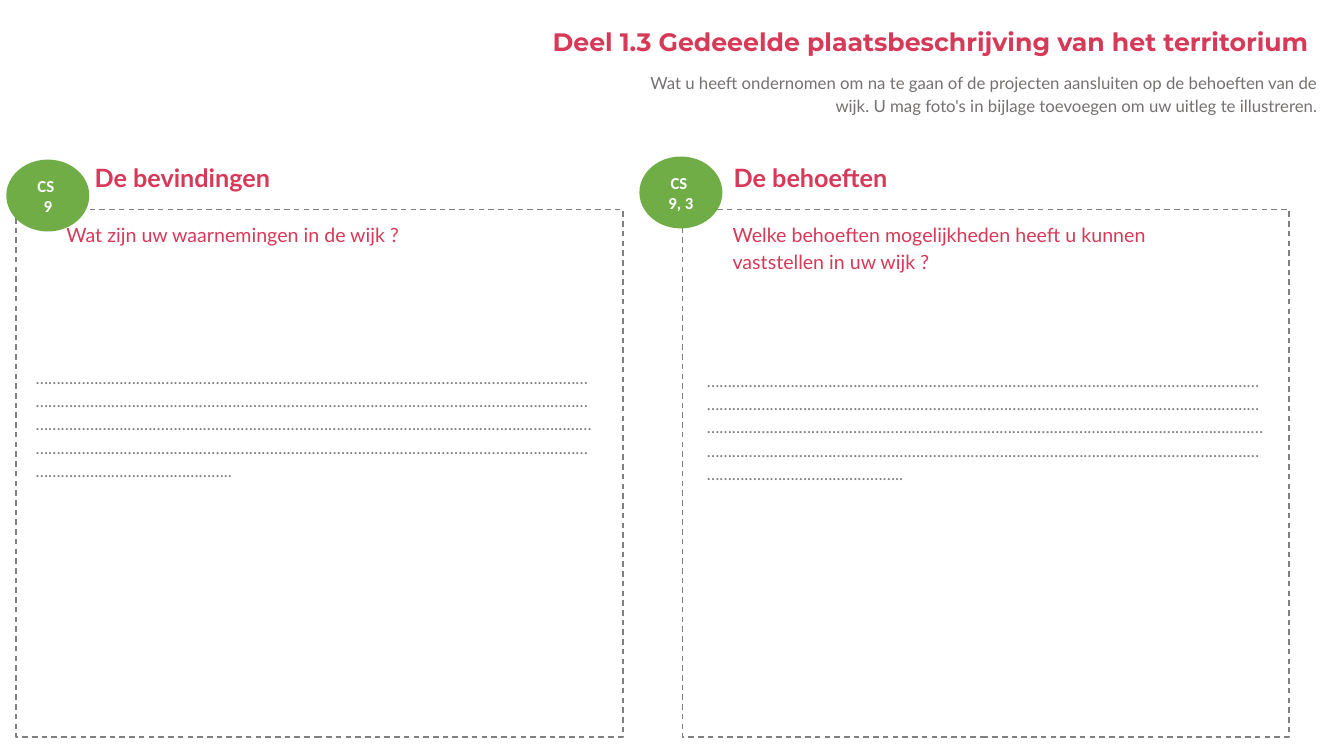
from pptx import Presentation
from pptx.dml.color import RGBColor
from pptx.enum.dml import MSO_LINE
from pptx.enum.shapes import MSO_SHAPE as Shape
from pptx.enum.text import MSO_ANCHOR as Anchor, MSO_AUTO_SIZE as AutoSize, PP_ALIGN as Align
from pptx.util import Pt

RED = RGBColor(0xD7, 0x39, 0x58)
GREEN = RGBColor(0x70, 0xAD, 0x47)
GREY = RGBColor(0x80, 0x80, 0x80)
DARK_GREY = RGBColor(0x76, 0x71, 0x71)
WHITE = RGBColor(0xFF, 0xFF, 0xFF)

TITLE = {"name": "Montserrat", "size": Pt(18), "bold": True}
INTRO = {"name": "Lato", "size": Pt(12)}
HEADING = {"name": "Lato", "size": Pt(18), "bold": True}
QUESTION = {"name": "Lato", "size": Pt(14)}
ANSWER = {"name": "Lato", "size": Pt(12), "italic": True}
BADGE = {"name": "Calibri", "size": Pt(12), "bold": True}
BODY = {"line_spacing": 1.15, "space_after": Pt(10)}

DOTS = "…………………………………………………………………………………………………………………………………………………………………………………………………………………………………………………………….……………………………………………………………………………………………………………………………………………………………………………………………………………………………………………………………….."

PANELS = [
    {"heading": "De bevindingen", "question": "Wat zijn uw waarnemingen in de wijk ?",
     "criteria": "9", "frame_x": 11.5, "heading_x": 60.5, "question_x": 40.3,
     "question_h": 25.2, "answer_at": (18.7, 257), "badge_at": (5, 114.5)},
    {"heading": "De behoeften",
     "question": "Welke behoeften mogelijkheden heeft u kunnen vaststellen in uw wijk ?",
     "criteria": "9, 3", "frame_x": 487.4, "heading_x": 517, "question_x": 516.2,
     "question_h": 44.6, "answer_at": (498.2, 259.2), "badge_at": (457.2, 112.3)},
]


def write(shape, lines, font, color, paragraph_format):
    shape.text_frame.text = "\n".join(lines)
    for paragraph in shape.text_frame.paragraphs:
        for key, value in paragraph_format.items():
            setattr(paragraph, key, value)
        text_font = paragraph.runs[0].font
        for key, value in font.items():
            setattr(text_font, key, value)
        text_font.color.rgb = color


def add_text(box, text, font, color, paragraph_format):
    textbox = slide.shapes.add_textbox(*map(Pt, box))
    textbox.text_frame.word_wrap = True
    textbox.text_frame.auto_size = AutoSize.SHAPE_TO_FIT_TEXT
    write(textbox, [text], font, color, paragraph_format)


prs = Presentation()
prs.slide_width, prs.slide_height = Pt(960), Pt(540)
slide = prs.slides.add_slide(prs.slide_layouts[5])

title = slide.shapes.title
title.left, title.top, title.width, title.height = map(Pt, (219.6, 18, 722.2, 25.9))
title.text_frame.vertical_anchor = Anchor.TOP
title.text_frame.auto_size = AutoSize.SHAPE_TO_FIT_TEXT
write(title, ["Deel 1.3 Gedeeelde plaatsbeschrijving van het territorium"], TITLE, RED,
      {"alignment": Align.RIGHT, "line_spacing": 0.87, "space_before": Pt(0)})

add_text((431.3, 46.1, 517, 38.9),
         "Wat u heeft ondernomen om na te gaan of de projecten aansluiten op de behoeften "
         "van de wijk. U mag foto's in bijlage toevoegen om uw uitleg te illustreren.",
         INTRO, DARK_GREY, BODY | {"alignment": Align.RIGHT})

for panel in PANELS:
    frame = slide.shapes.add_shape(
        Shape.RECTANGLE, *map(Pt, (panel["frame_x"], 149.8, 433.4, 376.6)))
    frame.shadow.inherit = False
    frame.fill.background()
    frame.line.color.rgb = GREY
    frame.line.width = Pt(1)
    frame.line.dash_style = MSO_LINE.DASH

    add_text((panel["heading_x"], 112.3, 419.8, 28.8), panel["heading"], HEADING, RED, {})
    add_text((panel["question_x"], 153.4, 360.7, panel["question_h"]),
             panel["question"], QUESTION, RED, BODY)
    add_text((*panel["answer_at"], 412.6, 115.9), DOTS, ANSWER, GREY, BODY)

    badge = slide.shapes.add_shape(
        Shape.OVAL, *map(Pt, (*panel["badge_at"], 58.3, 50.4)))
    badge.shadow.inherit = False
    badge.fill.solid()
    badge.fill.fore_color.rgb = GREEN
    badge.line.color.rgb = GREEN
    badge.line.width = Pt(1)
    badge.text_frame.vertical_anchor = Anchor.MIDDLE
    write(badge, ["CS ", panel["criteria"]], BADGE, WHITE, {"alignment": Align.CENTER})

prs.save("out.pptx")
